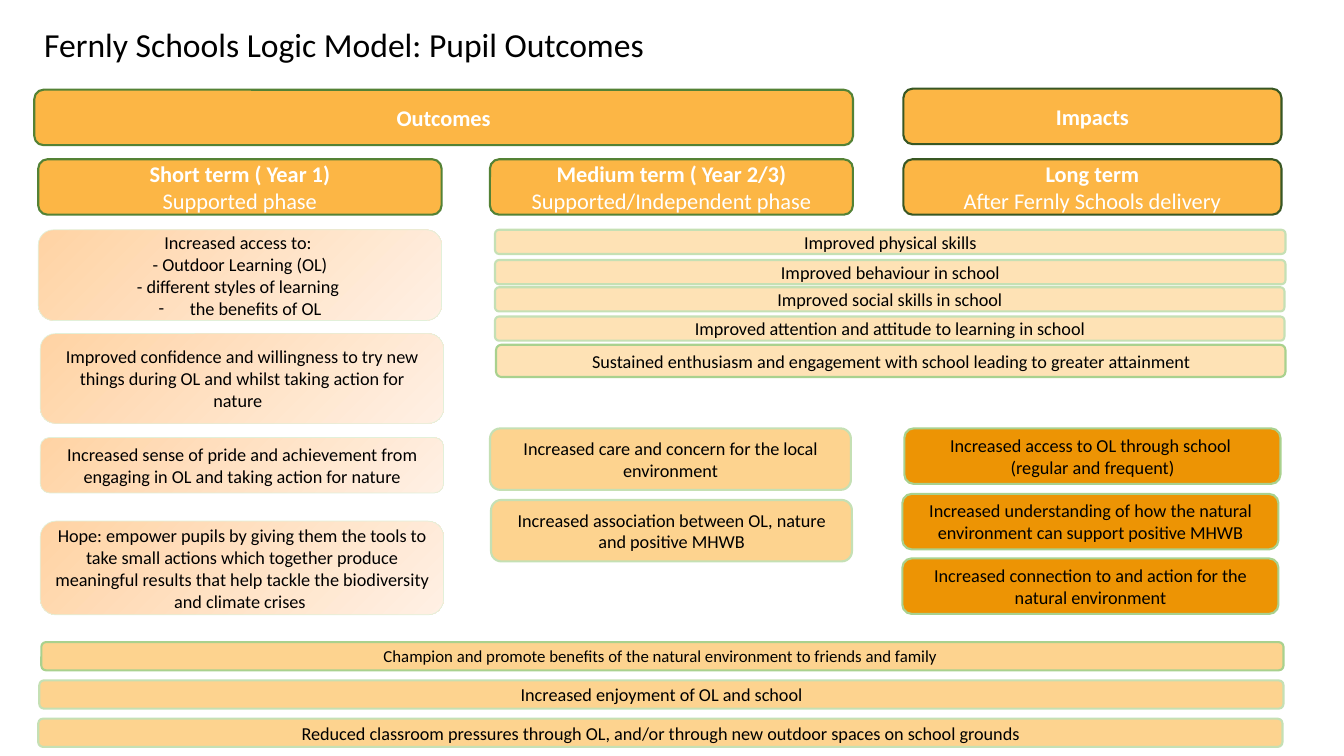
from lxml import etree
from pptx import Presentation
from pptx.dml.color import RGBColor
from pptx.enum.shapes import MSO_SHAPE
from pptx.enum.text import MSO_ANCHOR, PP_ALIGN
from pptx.oxml.ns import qn
from pptx.util import Inches, Pt

ROUNDED = MSO_SHAPE.ROUNDED_RECTANGLE
MIDDLE, BOTTOM = MSO_ANCHOR.MIDDLE, MSO_ANCHOR.BOTTOM
CENTER, LEFT = PP_ALIGN.CENTER, PP_ALIGN.LEFT

PALE_GREEN, MID_GREEN = "C5E0B4", "A9D18E"
DARK_GREEN, DEEP_GREEN = "548235", "385723"
HEADER_FILL, SHARED_FILL, MEDIUM_FILL, LONG_FILL = "FCB645", "FEE2B5", "FDD38F", "ED9404"
SHORT_GRADIENT = ("FFD3A4", "FFF0E4")
BULLET = "• "


def color(value):
    return RGBColor.from_string(value)


def write_text(shape, lines, anchor, alignment, formats):
    frame = shape.text_frame
    frame.word_wrap = True
    frame.vertical_anchor = anchor
    for index, (line, format_values) in enumerate(zip(lines, formats)):
        paragraph = frame.paragraphs[0] if index == 0 else frame.add_paragraph()
        paragraph.alignment = alignment
        if line.startswith(BULLET):
            line = line.removeprefix(BULLET)
            properties = paragraph._p.get_or_add_pPr()
            properties.set("marL", str(Inches(0.31)))
            properties.set("indent", str(-Inches(0.31)))
            etree.SubElement(properties, qn("a:buFont")).set("typeface", "Calibri")
            etree.SubElement(properties, qn("a:buChar")).set("char", "-")
        run = paragraph.add_run()
        run.text = line
        run.font.color.rgb = color(format_values["color"])
        for name in ("name", "size", "bold"):
            setattr(run.font, name, format_values[name])


presentation = Presentation()
presentation.slide_width = Inches(13.33)
presentation.slide_height = Inches(7.5)
slide = presentation.slides.add_slide(presentation.slide_layouts[6])

body = {"name": "Calibri", "size": Pt(13), "bold": False, "color": "000000"}
small_body = {**body, "size": Pt(12)}
title_format = {**body, "size": Pt(24)}
subheading = {**body, "size": Pt(16), "color": "FFFFFF"}
heading = {**subheading, "bold": True}

title = slide.shapes.add_textbox(Inches(0.34), Inches(0.03), Inches(11.5), Inches(0.66))
write_text(title, ["Fernly Schools Logic Model: Pupil Outcomes"], BOTTOM, LEFT, [title_format])
title.text_frame.paragraphs[0].line_spacing = 0.9

header_formats = [heading, subheading]
body_formats = [body] * 4
groups = [
    (HEADER_FILL, DARK_GREEN, 1.5, header_formats, [
        (0.34, 0.89, 8.12, 0.55, ["Outcomes"]),
        (0.38, 1.58, 4, 0.55, ["Short term ( Year 1)", "Supported phase"]),
        (4.86, 1.58, 3.6, 0.55, ["Medium term ( Year 2/3)", "Supported/Independent phase"]),
    ]),
    (HEADER_FILL, DEEP_GREEN, 1.5, header_formats, [
        (8.96, 0.88, 3.75, 0.55, ["Impacts"]),
        (8.96, 1.58, 3.75, 0.55, ["Long term", "After Fernly Schools delivery"]),
    ]),
    (SHORT_GRADIENT, "E2F0D9", 0.5, body_formats, [
        (0.38, 2.28, 4, 0.9, ["Increased access to: ", "- Outdoor Learning (OL)",
                              "- different styles of learning ", BULLET + "the benefits of OL"]),
        (0.4, 3.31, 4, 0.89, ["Improved confidence and willingness to try new things "
                              "during OL and whilst taking action for nature  "]),
        (0.4, 4.34, 4, 0.55, ["Increased sense of pride and achievement from "
                              "engaging in OL and taking action for nature"]),
        (0.4, 5.17, 4, 0.93, ["Hope: empower pupils by giving them the tools to take small "
                              "actions which together produce meaningful results that help "
                              "tackle the biodiversity and climate crises "]),
    ]),
    (SHARED_FILL, PALE_GREEN, 1.5, body_formats, [
        (4.91, 2.28, 7.84, 0.24, ["Improved physical skills"]),
        (4.91, 2.58, 7.84, 0.24, ["Improved behaviour in school"]),
        (4.91, 2.85, 7.83, 0.24, ["Improved social skills in school"]),
        (4.91, 3.14, 7.83, 0.24, ["Improved attention and attitude to learning in school"]),
    ]),
    (SHARED_FILL, MID_GREEN, 1.5, body_formats, [
        (4.92, 3.42, 7.83, 0.32, ["Sustained enthusiasm and engagement with school "
                                  "leading to greater attainment"]),
    ]),
    (MEDIUM_FILL, PALE_GREEN, 1.5, body_formats, [
        (4.86, 4.25, 3.58, 0.61, ["Increased care and concern for the local environment"]),
        (4.87, 4.96, 3.58, 0.61, ["Increased association between OL, nature and positive MHWB"]),
        (0.39, 6.75, 12.34, 0.28, ["Increased enjoyment of OL and school"]),
        (0.38, 7.13, 12.34, 0.28, ["Reduced classroom pressures through OL, and/or through "
                                   "new outdoor spaces on school grounds"]),
    ]),
    (MEDIUM_FILL, MID_GREEN, 1.5, [small_body], [
        (0.41, 6.37, 12.32, 0.28, ["Champion and promote benefits of the natural "
                                   "environment to friends and family "]),
    ]),
    (LONG_FILL, MID_GREEN, 1.5, body_formats, [
        (8.97, 4.25, 3.73, 0.55, ["Increased access to OL through school ",
                                  "(regular and frequent)"]),
        (8.95, 4.9, 3.73, 0.55, ["Increased understanding of how the natural "
                                 "environment can support positive MHWB"]),
        (8.95, 5.54, 3.73, 0.55, ["Increased connection to and action for the "
                                  "natural environment"]),
    ]),
]

for fill, outline, outline_width, formats, boxes in groups:
    for *place, lines in boxes:
        shape = slide.shapes.add_shape(ROUNDED, *map(Inches, place))
        shape.shadow.inherit = False
        if fill == SHORT_GRADIENT:
            shape.fill.gradient()
            shape.fill.gradient_angle = 315
            for stop, stop_color in zip(shape.fill.gradient_stops, fill):
                stop.color.rgb = color(stop_color)
        else:
            shape.fill.solid()
            shape.fill.fore_color.rgb = color(fill)
        shape.line.color.rgb = color(outline)
        shape.line.width = Pt(outline_width)
        write_text(shape, lines, MIDDLE, CENTER, formats)

presentation.save("out.pptx")
